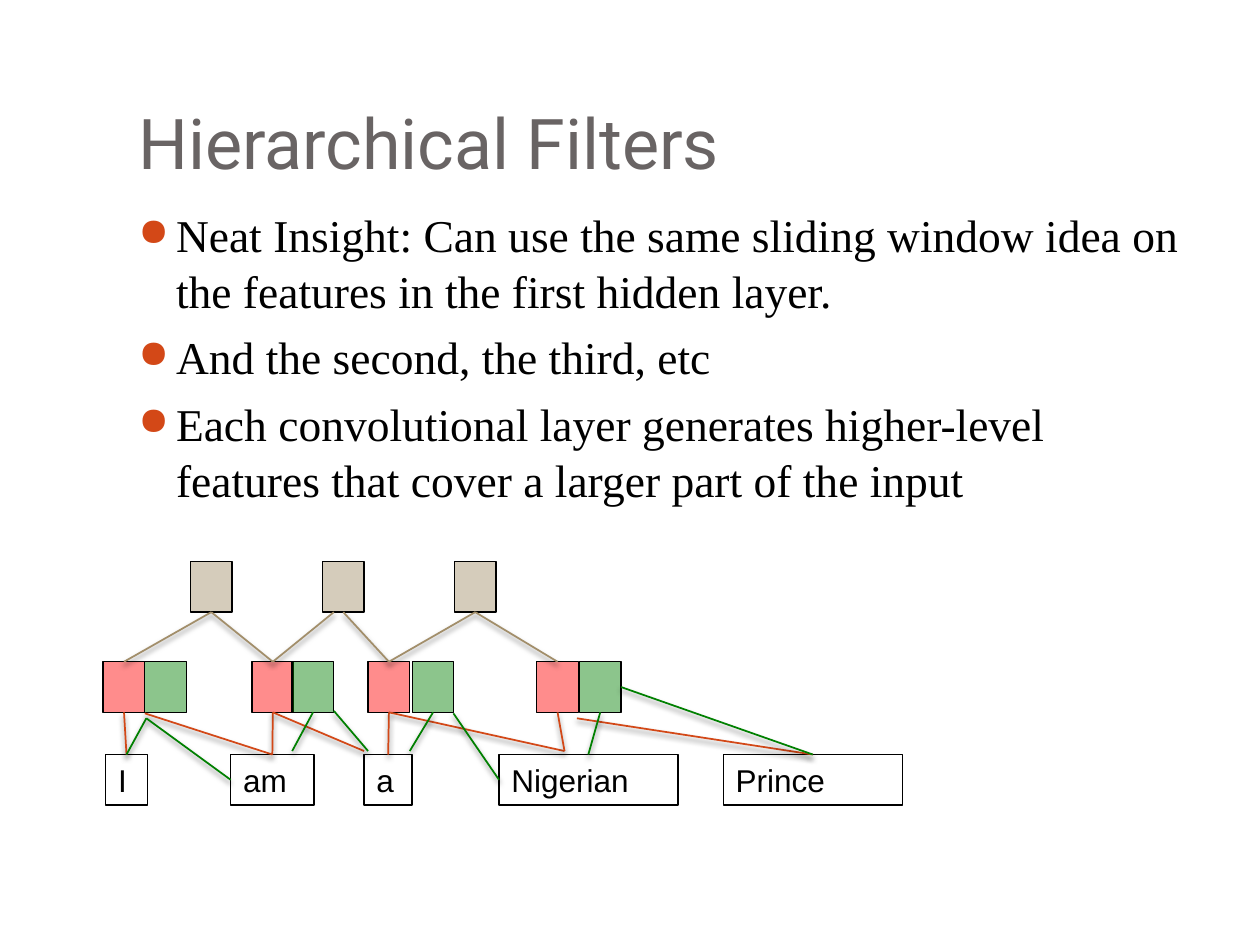
from typing import NamedTuple, Union

from lxml import etree
from pptx import Presentation
from pptx.dml.color import RGBColor
from pptx.enum.shapes import MSO_CONNECTOR, MSO_SHAPE
from pptx.enum.text import MSO_ANCHOR, PP_ALIGN
from pptx.oxml.ns import qn
from pptx.util import Cm, Pt

RECTANGLE = MSO_SHAPE.RECTANGLE
STRAIGHT = MSO_CONNECTOR.STRAIGHT
LEFT = PP_ALIGN.LEFT
ANCHOR_TOP, ANCHOR_BOTTOM = MSO_ANCHOR.TOP, MSO_ANCHOR.BOTTOM
TOP_SIDE, LEFT_SIDE, BOTTOM_SIDE, RIGHT_SIDE = range(4)

COLORS = {
    "black": "000000",
    "title": "696464",
    "orange": "D34817",
    "red": "FF0000",
    "green": "008000",
    "tan": "A28E6A",
}
CELL_WIDTH, BOX_HEIGHT = 0.84, 1.02
WORD_TOP, FILTER_TOP, UPPER_TOP = 15.21, 13.34, 11.32
CELL_OPACITY = 45


class Word(NamedTuple):
    text: str
    left: float
    width: float


class CellRow(NamedTuple):
    name: str
    color: str
    top: float
    lefts: list[float]


class Side(NamedTuple):
    box: str
    site: int


class Point(NamedTuple):
    x: float
    y: float


End = Union[Side, Point]


class Link(NamedTuple):
    start: End
    end: End


def top(name: str) -> Side:
    return Side(name, TOP_SIDE)


def bottom(name: str) -> Side:
    return Side(name, BOTTOM_SIDE)


BULLETS = [
    "Neat Insight: Can use the same sliding window idea on the features in the first hidden layer.",
    "And the second, the third, etc",
    "Each convolutional layer generates higher-level features that cover a larger part of the input",
]
WORDS = [
    Word("I", 2.13, 0.84),
    Word("am", 4.65, 1.68),
    Word("a", 7.34, 0.97),
    Word("Nigerian", 10.06, 3.61),
    Word("Prince", 14.58, 3.61),
]
CELL_ROWS = [
    CellRow("red", "red", FILTER_TOP, [2.08, 5.08, 7.42, 10.82]),
    CellRow("green", "green", FILTER_TOP, [2.92, 5.89, 8.31, 11.68]),
    CellRow("upper", "tan", UPPER_TOP, [3.84 + 2.66 * i for i in range(3)]),
]
NIGERIAN_POINT = Point(11.38, 15.14)
GREEN_FORK = Point(2.95, 14.48)
LINKS = {
    "orange": [
        Link(top("I"), bottom("red1")),
        Link(top("am"), Point(2.92, 14.38)),
        Link(top("am"), bottom("red2")),
        Link(Point(7.34, 15.14), bottom("red2")),
        Link(top("a"), bottom("red3")),
        Link(NIGERIAN_POINT, bottom("red3")),
        Link(NIGERIAN_POINT, bottom("red4")),
        Link(top("Prince"), Point(11.63, 14.48)),
    ],
    "green": [
        Link(top("I"), GREEN_FORK),
        Link(Side("am", LEFT_SIDE), GREEN_FORK),
        Link(Point(5.89, 15.14), bottom("green2")),
        Link(Point(7.42, 15.14), Point(6.73, 14.33)),
        Link(Point(8.26, 15.14), bottom("green3")),
        Link(Side("Nigerian", LEFT_SIDE), Point(9.14, 14.38)),
        Link(Point(11.86, 15.21), bottom("green4")),
        Link(top("Prince"), Side("green4", RIGHT_SIDE)),
    ],
    "tan": [
        Link(top("red1"), bottom("upper1")),
        Link(top("red2"), bottom("upper1")),
        Link(top("red2"), Point(6.73, 12.34)),
        Link(top("red3"), bottom("upper2")),
        Link(top("red3"), bottom("upper3")),
        Link(top("red4"), bottom("upper3")),
    ],
}


def rgb(name: str) -> RGBColor:
    return RGBColor.from_string(COLORS[name])


def add_child(parent, tag: str, **attributes):
    return etree.SubElement(parent, qn(tag), attributes)


def write(para, text: str, *, font: str, size: float, color: str = "black") -> None:
    para.alignment = LEFT
    span = para.add_run()
    span.text = text
    span.font.name, span.font.size = font, Pt(size)
    span.font.color.rgb = rgb(color)


def add_text_frame(page, position: tuple, anchor):
    frame = page.shapes.add_textbox(*map(Cm, position)).text_frame
    frame.word_wrap = True
    frame.vertical_anchor = anchor
    return frame


def add_bullet(para) -> None:
    props = para._p.get_or_add_pPr()
    props.set("marL", str(Cm(0.76)))
    props.set("indent", str(-Cm(0.76)))
    add_child(add_child(props, "a:buClr"), "a:srgbClr", val=COLORS["orange"])
    add_child(props, "a:buSzPct", val="85000")
    add_child(props, "a:buChar", char="●")


def add_box(page, left: float, upper: float, width: float):
    box = page.shapes.add_shape(RECTANGLE, Cm(left), Cm(upper), Cm(width), Cm(BOX_HEIGHT))
    box.shadow.inherit = False
    box.fill.background()
    box.line.color.rgb = rgb("black")
    box.line.width = Pt(0.75)
    return box


def add_cell(page, left: float, upper: float, color: str):
    box = add_box(page, left, upper, CELL_WIDTH)
    box.fill.solid()
    box.fill.fore_color.rgb = rgb(color)
    fill_color = box._element.spPr.find(qn("a:solidFill"))[0]
    add_child(fill_color, "a:alpha", val=str(CELL_OPACITY * 1000))
    return box


def add_link(page, boxes: dict, link: Link, color: str) -> None:
    points = [Cm(v) for end in link for v in (end if isinstance(end, Point) else (0, 0))]
    line = page.shapes.add_connector(STRAIGHT, *points)
    for end, connect in zip(link, (line.begin_connect, line.end_connect)):
        if isinstance(end, Side):
            connect(boxes[end.box], end.site)
    line.line.color.rgb = rgb(color)
    line.line.width = Pt(1)
    effects = add_child(line._element.spPr, "a:effectLst")
    shadow = add_child(effects, "a:outerShdw", blurRad=str(Pt(3)), dist=str(Pt(2)),
                       dir="5400000", rotWithShape="0")
    add_child(add_child(shadow, "a:srgbClr", val=COLORS["black"]), "a:alpha", val="50000")


def main() -> None:
    deck = Presentation()
    deck.slide_width, deck.slide_height = Cm(25.4), Cm(19.05)
    page = deck.slides.add_slide(deck.slide_layouts[6])

    # Title and bullets
    title = add_text_frame(page, (2.54, 0.76, 21.59, 3.18), ANCHOR_BOTTOM)
    title.margin_bottom = Cm(0.25)
    write(title.paragraphs[0], "Hierarchical Filters", font="Roboto", size=40, color="title")
    body = add_text_frame(page, (2.54, 4.01, 21.59, 7.14), ANCHOR_TOP)
    for i, text in enumerate(BULLETS):
        para = body.add_paragraph() if i else body.paragraphs[0]
        para.space_before = Pt(5.8)
        para.line_spacing = 1.03
        add_bullet(para)
        write(para, text, font="Times New Roman", size=26)

    # Input words
    boxes = {}
    for word in WORDS:
        box = boxes[word.text] = add_box(page, word.left, WORD_TOP, word.width)
        box.text_frame.word_wrap = False
        box.text_frame.vertical_anchor = ANCHOR_TOP
        write(box.text_frame.paragraphs[0], word.text, font="Arial", size=18)

    # Filter cells of both layers
    for row in CELL_ROWS:
        for number, left in enumerate(row.lefts, 1):
            boxes[f"{row.name}{number}"] = add_cell(page, left, row.top, row.color)

    # Links between the layers
    for color, links in LINKS.items():
        for link in links:
            add_link(page, boxes, link, color)

    deck.save("out.pptx")


if __name__ == "__main__":
    main()
